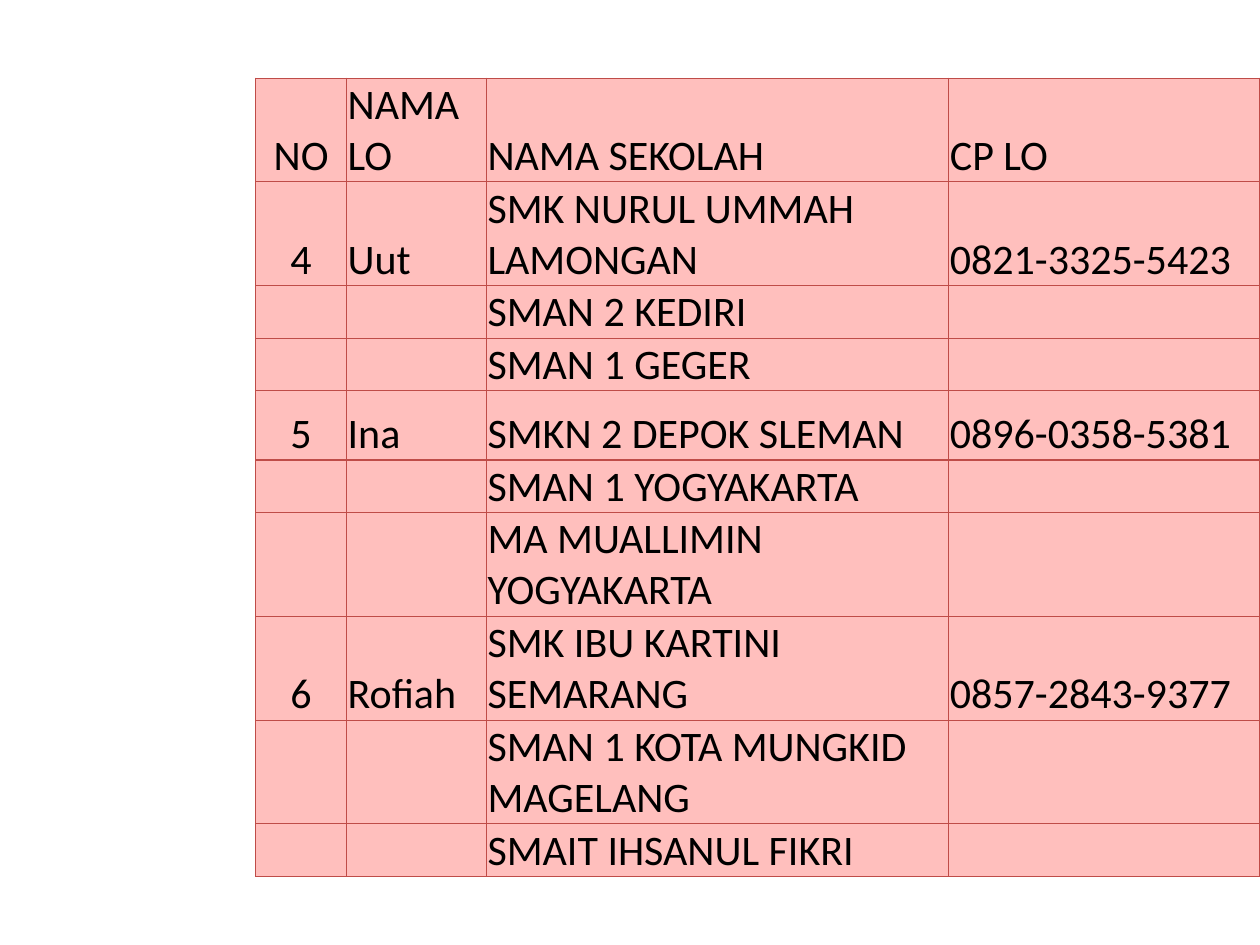
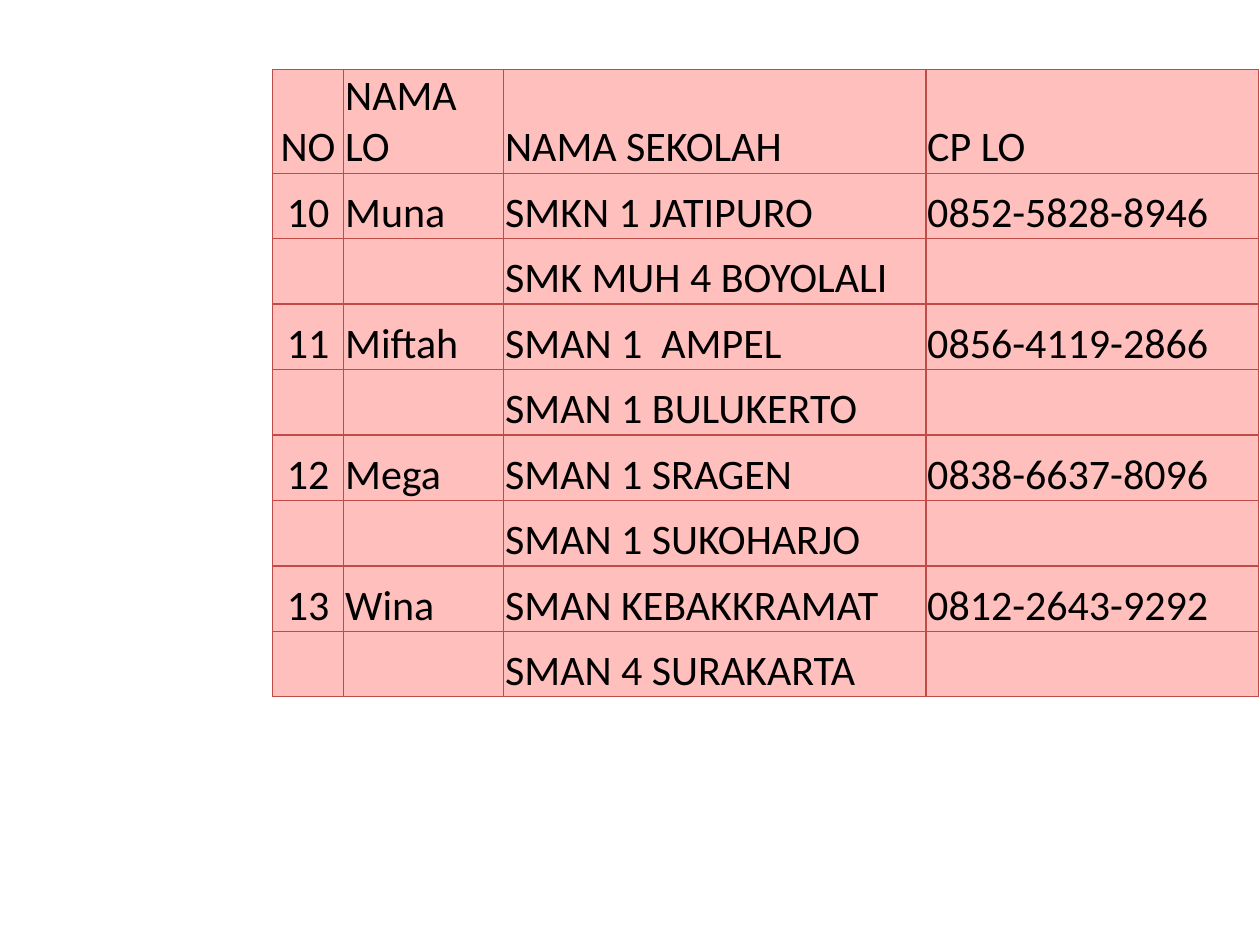
from dataclasses import dataclass

from lxml.etree import SubElement
from pptx import Presentation
from pptx.dml.color import RGBColor
from pptx.enum.text import MSO_ANCHOR, PP_ALIGN
from pptx.oxml.ns import qn
from pptx.util import Inches, Pt

COLORS = {"text": "000000", "fill": "FFBFBD", "border": "BF4C48"}
FONT = "Calibri"
FONT_SIZE = 24
BORDER_WIDTH = Pt(0.75)
HEADER = ("NO", "NAMA LO", "NAMA SEKOLAH", "CP LO")


@dataclass(frozen=True)
class Officer:
    number: int
    name: str
    phone: str
    schools: tuple[str, ...]


@dataclass(frozen=True)
class OfficerTable:
    left: float
    top: float
    column_widths: tuple[float, ...]
    row_heights: tuple[float, ...]
    officers: tuple[Officer, ...]


TABLES = (
    OfficerTable(
        2.03, 0.62, (0.72, 1.11, 3.67, 2.47),
        (0.79, 0.79, 0.4, 0.4, 0.55, 0.4, 0.79, 0.79, 0.79, 0.4),
        (
            Officer(4, "Uut", "0821-3325-5423",
                    ("SMK NURUL UMMAH LAMONGAN", "SMAN 2 KEDIRI", "SMAN 1 GEGER")),
            Officer(5, "Ina", "0896-0358-5381",
                    ("SMKN 2 DEPOK SLEMAN", "SMAN 1 YOGYAKARTA", "MA MUALLIMIN YOGYAKARTA")),
            Officer(6, "Rofiah", "0857-2843-9377",
                    ("SMK IBU KARTINI SEMARANG", "SMAN 1 KOTA MUNGKID MAGELANG",
                     "SMAIT IHSANUL FIKRI")),
        ),
    ),
    OfficerTable(
        2.16, 0.55, (0.57, 1.27, 3.35, 2.64), (0.52,) * 9,
        (
            Officer(10, "Muna", "0852-5828-8946", ("SMKN 1 JATIPURO", "SMK MUH 4 BOYOLALI")),
            Officer(11, "Miftah", "0856-4119-2866", ("SMAN 1  AMPEL", "SMAN 1 BULUKERTO")),
            Officer(12, "Mega", "0838-6637-8096", ("SMAN 1 SRAGEN", "SMAN 1 SUKOHARJO")),
            Officer(13, "Wina", "0812-2643-9292", ("SMAN KEBAKKRAMAT", "SMAN 4 SURAKARTA")),
        ),
    ),
)


def table_rows(officers: tuple[Officer, ...]) -> list[tuple[str, ...]]:
    """List one row per school, naming the officer only beside the first."""
    rows = [HEADER]
    for officer in officers:
        first, *others = officer.schools
        rows.append((str(officer.number), officer.name, first, officer.phone))
        rows.extend(("", "", school, "") for school in others)
    return rows


def write_text(paragraph, text: str, *, size: int = FONT_SIZE, font: str = FONT,
               color: str = COLORS["text"], align: PP_ALIGN = PP_ALIGN.LEFT) -> None:
    paragraph.alignment = align
    run = paragraph.add_run()
    run.text = text
    run.font.name = font
    run.font.size = Pt(size)
    run.font.color.rgb = RGBColor.from_string(color)


def add_borders(cell) -> None:
    properties = cell._tc.get_or_add_tcPr()
    for side in ("lnL", "lnR", "lnT", "lnB"):
        line = SubElement(properties, qn(f"a:{side}"), w=str(BORDER_WIDTH))
        solid = SubElement(line, qn("a:solidFill"))
        SubElement(solid, qn("a:srgbClr"), val=COLORS["border"])


def style_cell(cell) -> None:
    add_borders(cell)
    cell.fill.solid()
    cell.fill.fore_color.rgb = RGBColor.from_string(COLORS["fill"])
    cell.vertical_anchor = MSO_ANCHOR.BOTTOM
    cell.margin_left = cell.margin_top = cell.margin_right = Inches(0.01)
    cell.margin_bottom = 0


def add_officer_table(slide, layout: OfficerTable) -> None:
    rows = table_rows(layout.officers)
    table = slide.shapes.add_table(
        len(rows), len(HEADER), Inches(layout.left), Inches(layout.top),
        Inches(sum(layout.column_widths)), Inches(sum(layout.row_heights))).table
    table.first_row = table.horz_banding = False
    for column, width in zip(table.columns, layout.column_widths):
        column.width = Inches(width)
    for row, height, texts in zip(table.rows, layout.row_heights, rows):
        row.height = Inches(height)
        for index, (cell, text) in enumerate(zip(row.cells, texts)):
            style_cell(cell)
            if text:
                write_text(cell.text_frame.paragraphs[0], text,
                           align=PP_ALIGN.CENTER if index == 0 else PP_ALIGN.LEFT)


def main() -> None:
    presentation = Presentation()
    presentation.slide_width = Inches(10)
    presentation.slide_height = Inches(7.5)
    for layout in TABLES:
        slide = presentation.slides.add_slide(presentation.slide_layouts[6])
        add_officer_table(slide, layout)
    presentation.save("out.pptx")


if __name__ == "__main__":
    main()
